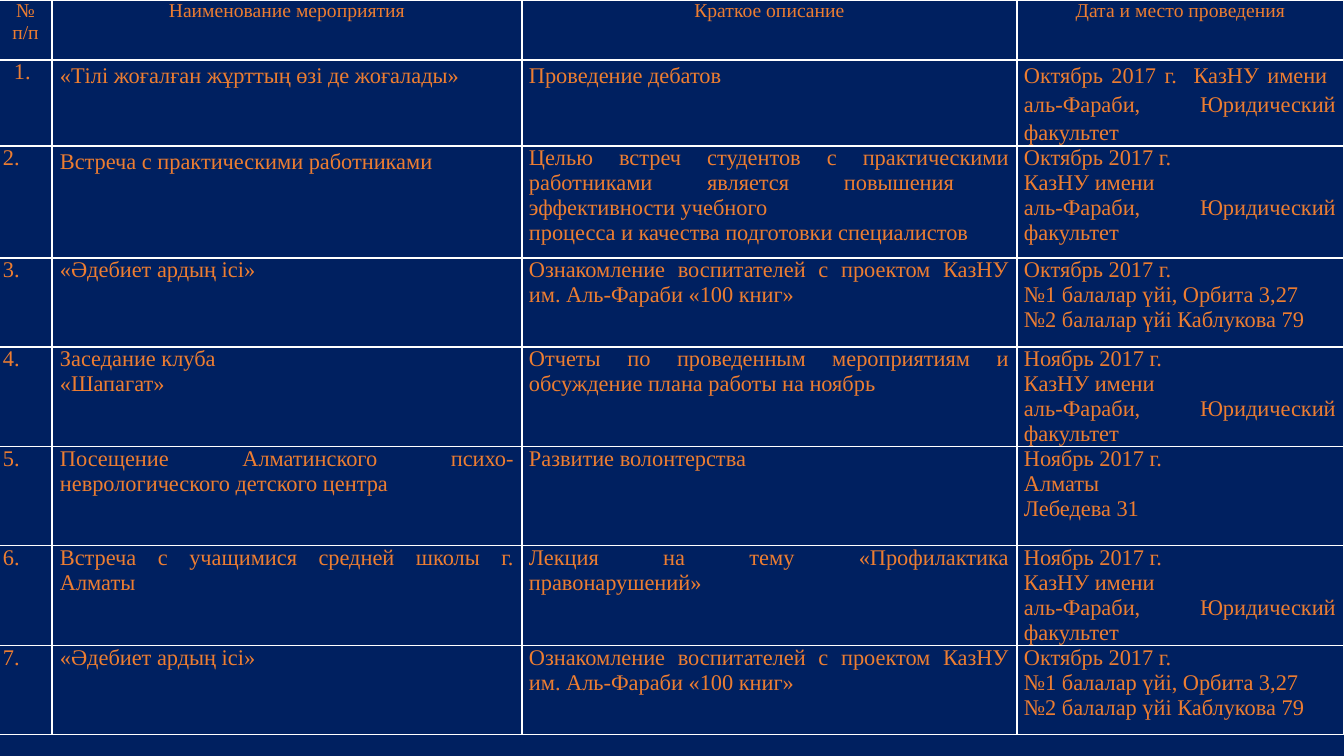
from dataclasses import dataclass
from typing import Any

import lxml.etree
import pptx
import pptx.dml.color
import pptx.enum.text
import pptx.oxml.ns
import pptx.util

SCALE = 914400 / 100.8
COLORS = {"navy": "002060", "orange": "ED7D31", "white": "FFFFFF"}
FONT = "Times New Roman"
COLS = [53, 470, 495, 327]
ALIGN = pptx.enum.text.PP_ALIGN


@dataclass
class Event:
    title: str
    about: str
    place: str
    height: int


def px(count: int) -> pptx.util.Emu:
    return pptx.util.Emu(round(count * SCALE))


def color(name: str) -> pptx.dml.color.RGBColor:
    return pptx.dml.color.RGBColor.from_string(COLORS[name])


def assign(target: Any, values: dict[str, Any]) -> None:
    for name, value in values.items():
        setattr(target, name, value)


HEAD = {"alignment": ALIGN.CENTER}
LEFT = {"alignment": ALIGN.LEFT}
BODY = {"alignment": ALIGN.JUSTIFY}
LOOSE = BODY | {"line_spacing": 1.15, "space_after": pptx.util.Pt(10)}

CAMPUS = "КазНУ имени\nаль-Фараби, Юридический факультет"
HOMES = "Октябрь 2017 г.\n№1 балалар үйі, Орбита 3,27\n№2 балалар үйі Каблукова 79"
BOOKS = Event(
    "«Әдебиет ардың ісі»",
    "Ознакомление воспитателей с проектом КазНУ им. Аль-Фараби «100 книг»",
    HOMES, 89)
TITLES = ["№\nп/п", "Наименование мероприятия", "Краткое описание",
          "Дата и место проведения"]
EVENTS = [
    Event("«Тілі жоғалған жұрттың өзі де жоғалады»", "Проведение дебатов",
          "Октябрь 2017 г.  КазНУ имени  аль-Фараби, Юридический факультет", 86),
    Event("Встреча с практическими работниками",
          "Целью встреч студентов с практическими работниками является "
          "повышения  эффективности учебного\n"
          "процесса и качества подготовки специалистов",
          f"Октябрь 2017 г.\n{CAMPUS}", 112),
    BOOKS,
    Event("Заседание клуба\n«Шапагат»",
          "Отчеты по проведенным мероприятиям и обсуждение плана работы на ноябрь",
          f"Ноябрь 2017 г.\n{CAMPUS}", 100),
    Event("Посещение Алматинского психо-неврологического детского центра",
          "Развитие волонтерства", "Ноябрь 2017 г.\nАлматы\nЛебедева 31", 99),
    Event("Встреча с учащимися средней школы г. Алматы",
          "Лекция на тему «Профилактика правонарушений»",
          f"Ноябрь 2017 г.\n{CAMPUS}", 100),
    BOOKS,
]


def border(cell: Any) -> None:
    """Draw a thin white line on all four sides."""
    props = cell._tc.get_or_add_tcPr()
    qn = pptx.oxml.ns.qn
    for side in "LRTB":
        line = lxml.etree.SubElement(props, qn(f"a:ln{side}"), w="12700")
        fill = lxml.etree.SubElement(line, qn("a:solidFill"))
        lxml.etree.SubElement(fill, qn("a:srgbClr"), val=COLORS["white"])


def write(cell: Any, text: str, size: int, left: int, right: int,
          style: dict[str, Any]) -> None:
    border(cell)
    cell.fill.solid()
    cell.fill.fore_color.rgb = color("navy")
    assign(cell, {"margin_left": px(left), "margin_right": px(right),
                  "margin_top": 0, "margin_bottom": 0})
    cell.text = text
    for para in cell.text_frame.paragraphs:
        assign(para, style)
        for run in para.runs:
            assign(run.font, {"name": FONT, "size": pptx.util.Pt(size)})
            run.font.color.rgb = color("orange")


def fill(table: Any) -> None:
    for col, title in enumerate(TITLES):
        write(table.cell(0, col), title, 14, 4, 4, HEAD)
    for row, event in enumerate(EVENTS, 1):
        write(table.cell(row, 0), f"{row}.", 16, 15 if row == 1 else 4, 4, LEFT)
        for col, text in enumerate([event.title, event.about, event.place], 1):
            loose = row == 1 or (row, col) == (2, 1)
            left = 8 if col == 1 else 7
            write(table.cell(row, col), text, 16, left, 8, LOOSE if loose else BODY)


def main() -> None:
    deck = pptx.Presentation()
    assign(deck, {"slide_width": px(1344), "slide_height": px(756)})
    slide = deck.slides.add_slide(deck.slide_layouts[6])
    slide.background.fill.solid()
    slide.background.fill.fore_color.rgb = color("navy")
    rows = [60] + [event.height for event in EVENTS]
    table = slide.shapes.add_table(
        len(rows), len(COLS), px(-1), 0, px(sum(COLS)), px(sum(rows))).table
    assign(table, {"first_row": False, "horz_banding": False})
    for col, width in zip(table.columns, COLS):
        col.width = px(width)
    for row, height in zip(table.rows, rows):
        row.height = px(height)
    fill(table)
    deck.save("out.pptx")


if __name__ == "__main__":
    main()
